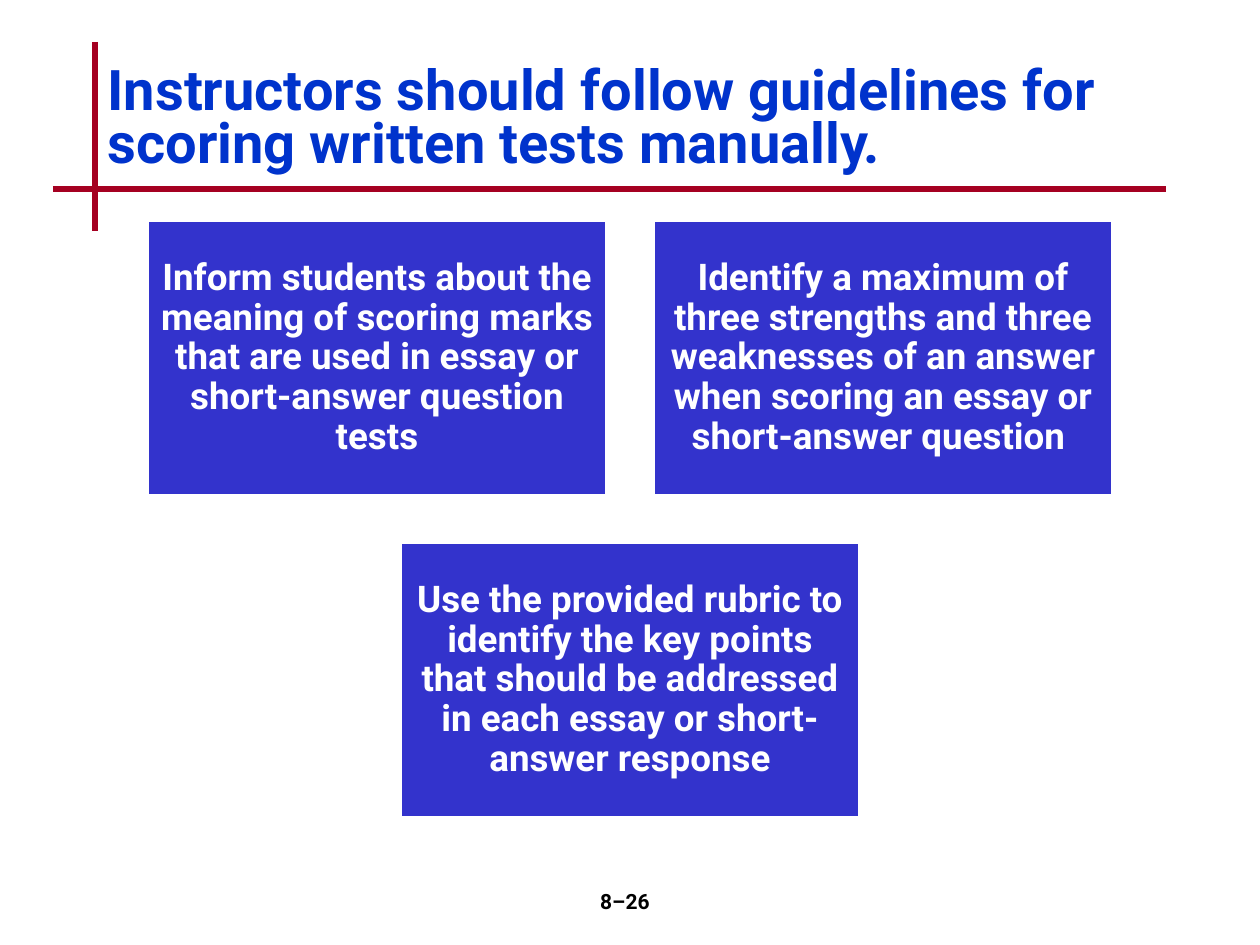
from dataclasses import dataclass

from lxml.etree import SubElement
from pptx import Presentation
from pptx.dml.color import RGBColor
from pptx.enum.shapes import MSO_CONNECTOR as Connector, MSO_SHAPE as Shape
from pptx.enum.text import MSO_ANCHOR as Anchor, MSO_AUTO_SIZE as AutoSize, PP_ALIGN as Align
from pptx.oxml.ns import qn
from pptx.util import Pt


@dataclass(frozen=True)
class Theme:
    font: str = "Roboto"
    title: RGBColor = RGBColor(0x00, 0x33, 0xCC)
    rule: RGBColor = RGBColor(0xA5, 0x00, 0x21)
    box: RGBColor = RGBColor(0x33, 0x33, 0xCC)
    white: RGBColor = RGBColor(0xFF, 0xFF, 0xFF)
    black: RGBColor = RGBColor(0x00, 0x00, 0x00)
    title_size: int = 32
    box_size: int = 21
    number_size: int = 12


theme = Theme()
EMU_PER_PX = 914400 / 126


def px(*lengths):
    return [round(length * EMU_PER_PX) for length in lengths]


def write(shape, text, size, color, align, anchor, line_spacing=1.0):
    frame = shape.text_frame
    frame.text = text
    paragraph = frame.paragraphs[0]
    formats = (
        (frame, {"word_wrap": True, "auto_size": AutoSize.NONE, "vertical_anchor": anchor}),
        (paragraph, {"alignment": align, "line_spacing": line_spacing}),
        (paragraph.font, {"name": theme.font, "size": Pt(size), "bold": True}),
    )
    for target, values in formats:
        for name, value in values.items():
            setattr(target, name, value)
    paragraph.font.color.rgb = color


presentation = Presentation()
presentation.slide_width, presentation.slide_height = px(1260, 945)
slide = presentation.slides.add_slide(presentation.slide_layouts[5])

# Crossed rules beside and below the title
for ends in ((95, 42, 95, 231), (53, 189, 1166, 189)):
    rule = slide.shapes.add_connector(Connector.STRAIGHT, *px(*ends))
    rule.line.color.rgb = theme.rule
    rule.line.width = Pt(3)
    SubElement(rule.element.spPr, qn("a:effectLst"))

# Title
title = slide.shapes.title
title.left, title.top, title.width, title.height = px(95, 42, 1071, 158)
write(title, "Instructors should follow guidelines for scoring written tests manually.",
      theme.title_size, theme.title, Align.LEFT, Anchor.MIDDLE, 0.8)

# Guideline boxes: two above, one centred below
BOX_WIDTH, BOX_HEIGHT = 460, 276
LEFT, TOP = 147, 220
COLUMN_STEP, ROW_STEP = 506, 322
guidelines = (
    (0, 0, "Inform students about the meaning of scoring marks that are used in essay or "
           "short-answer question tests"),
    (1, 0, "Identify a maximum of three strengths and three weaknesses of an answer when "
           "scoring an essay or short-answer question "),
    (0.5, 1, "Use the provided rubric to identify the key points that should be addressed in "
             "each essay or short-answer response"),
)
for column, row, text in guidelines:
    box = slide.shapes.add_shape(Shape.RECTANGLE, *px(
        LEFT + column * COLUMN_STEP, TOP + row * ROW_STEP, BOX_WIDTH, BOX_HEIGHT))
    box.shadow.inherit = False
    box.fill.solid()
    box.fill.fore_color.rgb = theme.box
    box.line.color.rgb = theme.white
    box.line.width = Pt(2)
    for side in ("left", "top", "right", "bottom"):
        setattr(box.text_frame, f"margin_{side}", px(11)[0])
    write(box, text, theme.box_size, theme.white, Align.CENTER, Anchor.MIDDLE, 0.9)

# Page number
number = slide.shapes.add_textbox(*px(494, 882, 262, 63))
write(number, "8–26", theme.number_size, theme.black, Align.CENTER, Anchor.TOP)

presentation.save("out.pptx")
